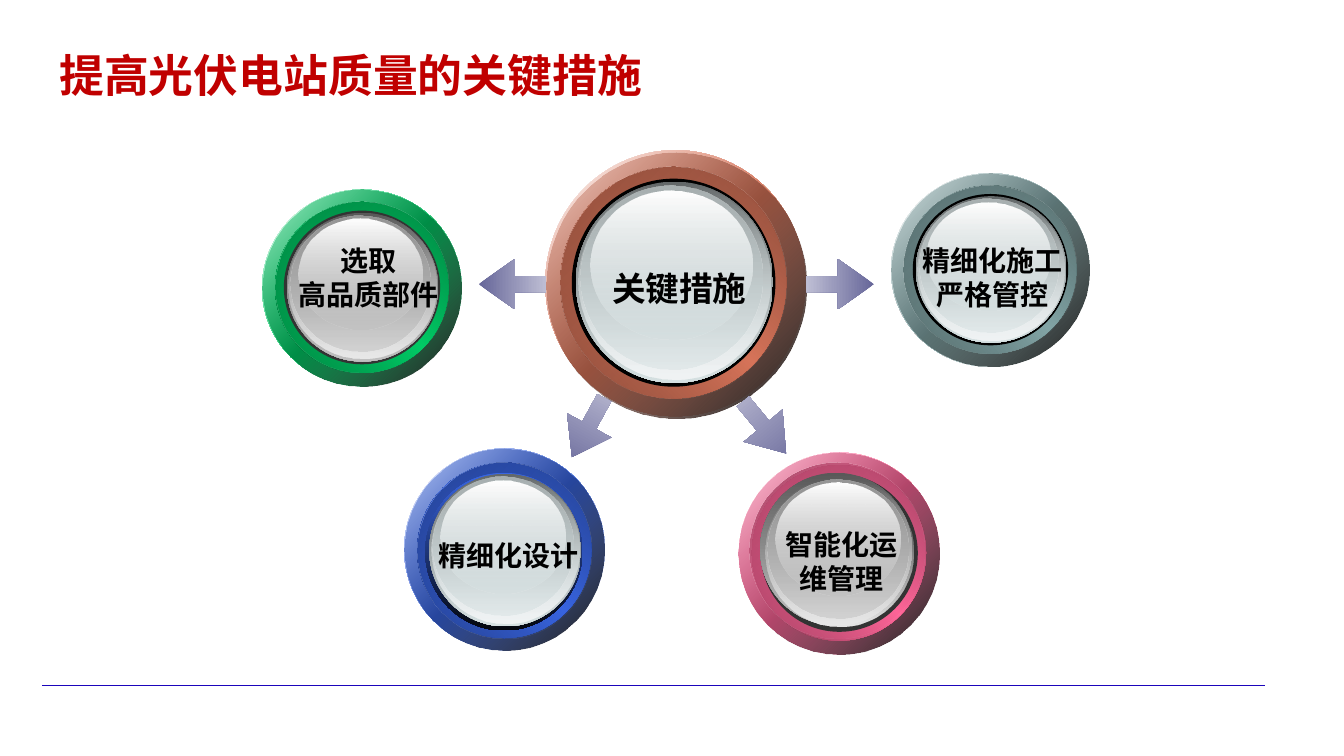
import pptx
import pptx.util
import pptx.dml.color
import pptx.enum.shapes
import pptx.enum.text
import pptx.oxml
import pptx.oxml.ns
import pptx.oxml.xmlchemy

Pt = pptx.util.Pt
RGB = pptx.dml.color.RGBColor
KIND = pptx.enum.shapes.MSO_SHAPE
ALIGN = pptx.enum.text.PP_ALIGN
qn = pptx.oxml.ns.qn
make = pptx.oxml.xmlchemy.OxmlElement

BLACK = RGB(0x00, 0x00, 0x00)
WHITE = RGB(0xFF, 0xFF, 0xFF)
RED = RGB(0xC0, 0x00, 0x00)
RULE = RGB(0x1B, 0x05, 0xBB)
TIP = RGB(0x66, 0x66, 0x99)
TAIL = RGB(0xBE, 0xBE, 0xD4)
BROWN = RGB(0xD8, 0x75, 0x5A)
TEAL = RGB(0x83, 0xA6, 0xA7)
PINK = RGB(0xFF, 0x66, 0x99)
GREEN = RGB(0x00, 0xCC, 0x66)
BLUE = RGB(0x39, 0x65, 0xE1)
NAVY = RGB(0x03, 0x06, 0x0D)
COAL = RGB(0x33, 0x33, 0x33)
PALE = RGB(0xD6, 0xE1, 0xE2)
GRAY = RGB(0xC0, 0xC0, 0xC0)


def mix(color, other, part):
    """Blend part of the other colour into a colour."""
    return RGB(*(round(a + (b - a) * part) for a, b in zip(color, other)))


class Board:
    font = "Noto Sans CJK SC"
    # Left, top, width and height of each orb layer, as parts of the orb
    rings = [
        (0, 0, 1, 1), (0, 0, 1, 1),
        (0.065, 0.063, 0.868, 0.87), (0.065, 0.063, 0.868, 0.87),
        (0.109, 0.107, 0.783, 0.782), (0.125, 0.118, 0.757, 0.757),
        (0.135, 0.123, 0.737, 0.739), (0.141, 0.133, 0.702, 0.69),
        (0.18, 0.15, 0.624, 0.56),
    ]

    def __init__(self, slide):
        self.slide = slide

    def fade(self, shape, angle, *stops):
        """Fill with a gradient; a stop is a colour and its opacity."""
        shape.fill.gradient()
        shape.fill.gradient_angle = (360 - angle) % 360
        holder = shape.element.spPr.find(qn("a:gradFill")).find(qn("a:gsLst"))
        for old in list(holder):
            holder.remove(old)
        for i, (color, alpha) in enumerate(stops):
            pos = round(100000 * i / (len(stops) - 1))
            holder.append(pptx.oxml.parse_xml(
                f'<a:gs xmlns:a="http://schemas.openxmlformats.org/drawingml/2006/main" '
                f'pos="{pos}"><a:srgbClr val="{color}">'
                f'<a:alpha val="{alpha * 1000}"/></a:srgbClr></a:gs>'))

    def shape(self, home, kind, *box):
        item = home.shapes.add_shape(kind, *map(Pt, box))
        item.shadow.inherit = False
        item.line.fill.background()
        return item

    def orb(self, x, y, w, h, color, glass, rim, shift=(0, 0), bumps=None):
        """Draw a glass button: bevel, ring, rim and glass, back to front."""
        deep, dark = mix(color, BLACK, 0.46), mix(color, BLACK, 0.365)
        fills = [
            (45, (WHITE, 100), (color, 100), (WHITE, 100)),
            (45, (color, 32), (BLACK, 90)),
            (315, (deep, 100), (color, 100), (deep, 100)),
            (45, (dark, 100), (color, 0)),
            (90, *((tone, 100) for tone in rim)),
            (90, (mix(glass, BLACK, 0.537), 100), (glass, 100)),
            (90, (glass, 0), (mix(glass, WHITE, 0.65), 100)),
            (90, (mix(glass, BLACK, 0.207), 100), (glass, 48)),
            (90, (WHITE, 100), (glass, 38)),
        ]
        group = self.slide.shapes.add_group_shape()
        for i, (ring, fill) in enumerate(zip(self.rings, fills)):
            dx, dy = (bumps or {}).get(i, shift if i > 1 else (0, 0))
            left, top, wide, high = ring
            disc = self.shape(group, KIND.OVAL, x + left * w + dx,
                              y + top * h + dy, wide * w, high * h)
            if len(fill) == 2:
                disc.fill.solid()
                disc.fill.fore_color.rgb = fill[1][0]
            else:
                self.fade(disc, *fill)

    def arrow(self, x, y, turn):
        item = self.shape(self.slide, KIND.LEFT_ARROW, x, y, 48.2, 36)
        item.adjustments[0], item.adjustments[1] = 0.312, 0.715
        item.rotation = turn
        self.fade(item, 0, (TIP, 100), (TAIL, 100))

    def line(self, x1, y1, x2, y2, color, width):
        item = self.slide.shapes.add_connector(
            pptx.enum.shapes.MSO_CONNECTOR.STRAIGHT, *map(Pt, (x1, y1, x2, y2)))
        item.line.color.rgb = color
        item.line.width = Pt(width)
        item.element.spPr.append(make("a:effectLst"))

    def text(self, words, *, box, size=20, color=BLACK, align=ALIGN.CENTER,
             wrap=True):
        frame = self.slide.shapes.add_textbox(*map(Pt, box)).text_frame
        frame.word_wrap = wrap
        # Insets keep the glyphs level with the fixed line height
        frame.margin_top = Pt(3.6 + 0.09 * size)
        frame.margin_bottom = Pt(3.6 - 0.09 * size)
        for i, row in enumerate(words.split("\n")):
            para = frame.paragraphs[0] if i == 0 else frame.add_paragraph()
            para.alignment = align
            para.line_spacing = Pt(1.2 * size)
            run = para.add_run()
            run.text = row
            run.font.name = self.font
            run.font.size = Pt(size)
            run.font.bold = True
            run.font.color.rgb = color
            asian = make("a:ea")
            asian.set("typeface", self.font)
            run.font._element.find(qn("a:latin")).addnext(asian)


def main():
    deck = pptx.Presentation()
    deck.slide_width, deck.slide_height = Pt(960), Pt(540)
    board = Board(deck.slides.add_slide(deck.slide_layouts[6]))

    # Footer rule and title
    board.line(30.2, 489.6, 903.6, 489.6, RULE, 0.75)
    board.text("提高光伏电站质量的关键措施", box=(35.3, 27.4, 697.7, 46),
               size=32, color=RED, align=ALIGN.LEFT)

    # Centre orb and its arrows
    board.orb(389.5, 107.3, 185.8, 190, BROWN, PALE, [BLACK],
              shift=(-1.3, 0), bumps={1: (0.7, 1.4)})
    for x, y, turn in [(576, 185, 180), (396, 287.3, 298.6),
                       (342, 185, 0), (522, 287.3, 230.3)]:
        board.arrow(x, y, turn)
    board.text("关键措施", box=(429.1, 185.8, 112.3, 36), size=24, wrap=False)

    # Outer orbs
    board.orb(636.5, 123.8, 141.8, 138.2, TEAL, PALE, [BLACK])
    board.text("精细化施工\n严格管控", box=(650.9, 168.5, 115.9, 55.4),
               wrap=False)

    board.orb(527.8, 323.3, 143.3, 144, PINK, GRAY, [COAL],
              bumps={3: (-1.4, -1.9), 5: (-2.8, -2.6)})
    board.text("智能化运维管理", box=(553, 371.5, 95.8, 56.2))

    board.orb(187.2, 135.4, 142.6, 140.4, GREEN, GRAY, [COAL])
    board.text("选取\n高品质部件", box=(198.7, 168.5, 129.6, 55.4))

    board.orb(288.7, 320.4, 143.3, 144, BLUE, PALE, [BLUE, NAVY],
              shift=(0, 1), bumps={4: (-0.5, 1.9)})
    board.text("精细化设计", box=(305.3, 379.4, 115.9, 31.7), wrap=False)

    deck.save("out.pptx")


if __name__ == "__main__":
    main()
